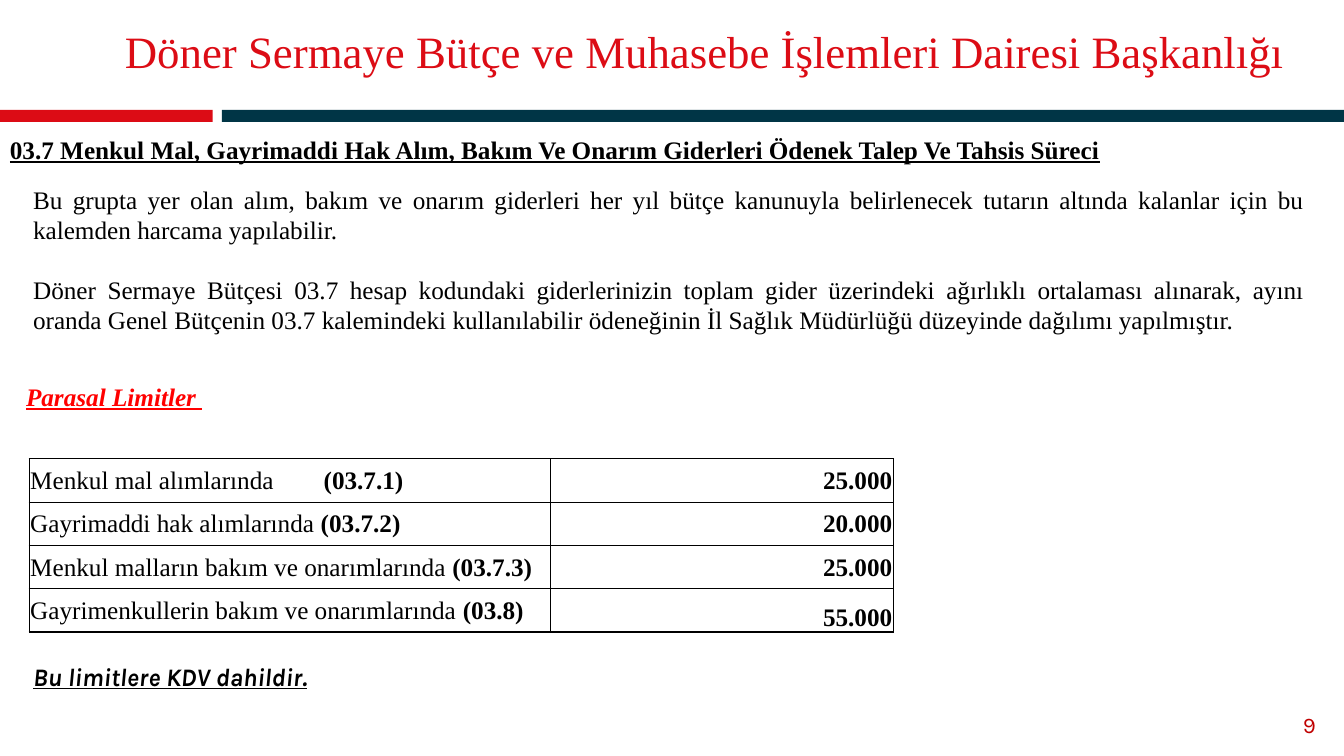
"""Build the slide on 03.7 budget expenses and their monetary limits."""
from lxml import etree
from pptx import Presentation
from pptx import util as u
from pptx.dml.color import RGBColor
from pptx.enum import shapes, text
from pptx.oxml.ns import qn

PX = 9144
COLORS = {"red": "DC0C15", "navy": "003546", "black": "000000",
          "bright": "FF0000", "number": "C00000"}
SERIF, SANS = "Times New Roman", "Karla"
LEFT, RIGHT, JUSTIFY = text.PP_ALIGN.LEFT, text.PP_ALIGN.RIGHT, text.PP_ALIGN.JUSTIFY
MIDDLE, BOTTOM = text.MSO_ANCHOR.MIDDLE, text.MSO_ANCHOR.BOTTOM

BARS = [((0, 109, 211, 12), "red"), ((220, 109, 1113, 12), "navy")]
BODY = [
    "Bu grupta yer olan alım, bakım ve onarım giderleri her yıl bütçe kanunuyla "
    "belirlenecek tutarın altında kalanlar için bu kalemden harcama yapılabilir.",
    "Döner Sermaye Bütçesi 03.7 hesap kodundaki giderlerinizin toplam gider üzerindeki "
    "ağırlıklı ortalaması alınarak, ayını oranda Genel Bütçenin 03.7 kalemindeki "
    "kullanılabilir ödeneğinin İl Sağlık Müdürlüğü düzeyinde dağılımı yapılmıştır.",
]
BOXES = [
    ((1225, 699, 90, 40), ["9"],
     dict(size=16, font=SANS, color="number", align=RIGHT, anchor=MIDDLE)),
    ((114, 14, 1201, 80), ["Döner Sermaye Bütçe ve Muhasebe İşlemleri Dairesi Başkanlığı"],
     dict(size=32, color="red", anchor=MIDDLE, line_spacing=0.9)),
    ((0, 128, 1333, 40),
     ["03.7 Menkul Mal, Gayrimaddi Hak Alım, Bakım Ve Onarım Giderleri Ödenek Talep Ve Tahsis Süreci"],
     dict(bold=True, underline=True)),
    ((23, 178, 1281, 192), BODY, dict(align=JUSTIFY, gap=21)),
    ((16, 373, 202, 40), ["Parasal Limitler "],
     dict(color="bright", bold=True, italic=True, underline=True)),
    ((23, 651, 389, 40), ["Bu limitlere KDV dahildir."],
     dict(font=SANS, bold=True, italic=True, underline=True)),
]
LIMITS = [
    ("Menkul mal alımlarında\t", "(03.7.1)", "25.000"),
    ("Gayrimaddi hak alımlarında ", "(03.7.2)", "20.000"),
    ("Menkul malların bakım ve onarımlarında ", "(03.7.3)", "25.000"),
    ("Gayrimenkullerin bakım ve onarımlarında ", "(03.8)", "55.000"),
]
TABLE_LEFT, TABLE_TOP, ROW_HEIGHT = 29, 455, 43
COLUMNS = [517, 340]
CODE_TAB = 291


def rgb(name):
    return RGBColor.from_string(COLORS[name])


def write(paragraph, content, size=18, font=SERIF, color="black", bold=False,
          italic=False, underline=False, align=LEFT, line_spacing=None):
    paragraph.alignment = align
    if line_spacing:
        paragraph.line_spacing = line_spacing
    run = paragraph.add_run()
    run.text = content
    run.font.size, run.font.name = u.Pt(size), font
    run.font.bold, run.font.italic, run.font.underline = bold, italic, underline
    run.font.color.rgb = rgb(color)


def add_bar(slide, place, color):
    bar = slide.shapes.add_shape(shapes.MSO_SHAPE.RECTANGLE, *(v * PX for v in place))
    bar.shadow.inherit = False
    bar.fill.solid()
    bar.fill.fore_color.rgb = rgb(color)
    bar.line.fill.background()


def add_text(slide, place, lines, anchor=text.MSO_ANCHOR.TOP, gap=0, **style):
    frame = slide.shapes.add_textbox(*(v * PX for v in place)).text_frame
    frame.word_wrap = True
    frame.vertical_anchor = anchor
    for index, line in enumerate(lines):
        paragraph = frame.add_paragraph() if index else frame.paragraphs[0]
        if index:
            paragraph.space_before = u.Pt(gap)
        write(paragraph, line, **style)


def add_tab(paragraph, position):
    tabs = etree.SubElement(paragraph._p.get_or_add_pPr(), qn("a:tabLst"))
    etree.SubElement(tabs, qn("a:tab"), pos=str(position * PX), algn="l")


def set_borders(cell, outer):
    properties = cell._tc.get_or_add_tcPr()
    for index, side in enumerate("LRTB"):
        width = u.Pt(1 if side in outer else 0.5)
        line = etree.Element(qn(f"a:ln{side}"), w=str(int(width)))
        fill = etree.SubElement(line, qn("a:solidFill"))
        etree.SubElement(fill, qn("a:srgbClr"), val=COLORS["black"])
        properties.insert(index, line)


def add_limits(slide):
    frame = slide.shapes.add_table(
        len(LIMITS), len(COLUMNS), TABLE_LEFT * PX, TABLE_TOP * PX,
        sum(COLUMNS) * PX, ROW_HEIGHT * len(LIMITS) * PX)
    table = frame.table
    table.first_row = table.horz_banding = False
    for column, width in zip(table.columns, COLUMNS):
        column.width = width * PX
    last = len(LIMITS) - 1
    for row, (label, code, amount) in enumerate(LIMITS):
        table.rows[row].height = ROW_HEIGHT * PX
        name_cell, amount_cell = table.cell(row, 0), table.cell(row, 1)
        edges = ("T" if row == 0 else "") + ("B" if row == last else "")
        for cell, side in ((name_cell, "L"), (amount_cell, "R")):
            cell.margin_left = cell.margin_right = cell.margin_top = PX
            cell.margin_bottom = 0
            cell.vertical_anchor = MIDDLE
            cell.fill.background()
            set_borders(cell, edges + side)
        paragraph = name_cell.text_frame.paragraphs[0]
        if "\t" in label:
            add_tab(paragraph, CODE_TAB)
        write(paragraph, label)
        write(paragraph, code, bold=True)
        write(amount_cell.text_frame.paragraphs[0], amount, bold=True, align=RIGHT)
    table.cell(last, 1).vertical_anchor = BOTTOM


def main():
    presentation = Presentation()
    presentation.slide_width, presentation.slide_height = 1333 * PX, 750 * PX
    slide = presentation.slides.add_slide(presentation.slide_layouts[6])
    for place, color in BARS:
        add_bar(slide, place, color)
    for place, lines, style in BOXES:
        add_text(slide, place, lines, **style)
    add_limits(slide)
    presentation.save("out.pptx")


if __name__ == "__main__":
    main()
